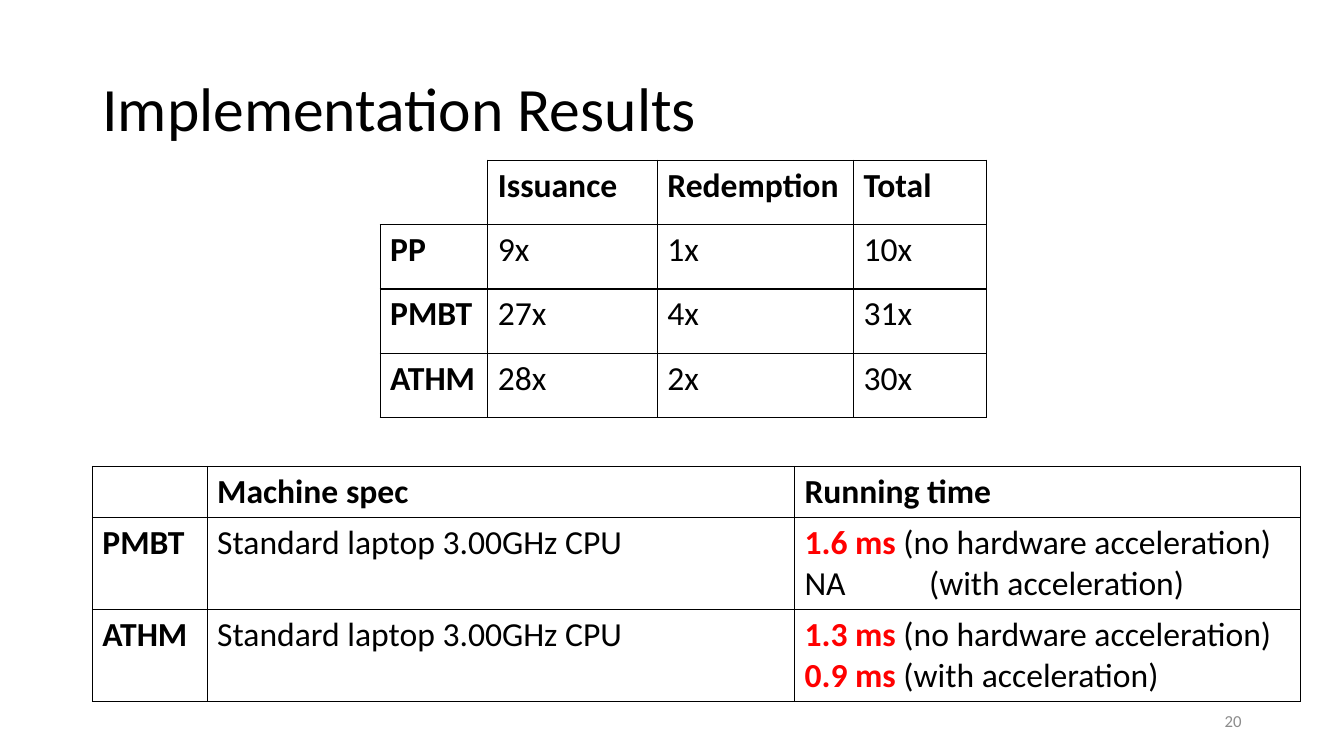
"""Build the slide with the results of the implementation."""
import pptx
import pptx.dml.color
import pptx.enum.text
import pptx.oxml
import pptx.oxml.ns
import pptx.util

Pt = pptx.util.Pt
ALIGN = pptx.enum.text.PP_ALIGN
MIDDLE = pptx.enum.text.MSO_ANCHOR.MIDDLE
FONT = "Calibri"
BLACK, RED, GREY = "000000", "FF0000", "8C8C8C"
SIDES = "LRTB"
NS = pptx.oxml.ns.nsdecls("a")
CPU = "Standard laptop 3.00GHz CPU"
SLOW = " (no hardware acceleration)"
FAST = " (with acceleration)"

COSTS = [
    ["", "Issuance", "Redemption", "Total"],
    ["PP", "9x", "1x", "10x"],
    ["PMBT", "27x", "4x", "31x"],
    ["ATHM", "28x", "2x", "30x"],
]
TIMES = [
    ["", "Machine spec", "Running time"],
    ["PMBT", CPU, [[("1.6 ms", True), (SLOW, False)],
                   [("NA\t(with acceleration)", False)]]],
    ["ATHM", CPU, [[("1.3 ms", True), (SLOW, False)],
                   [("0.9 ms", True), (FAST, False)]]],
]


def tint(code):
    return pptx.dml.color.RGBColor.from_string(code)


def add_run(para, text, size, color=BLACK, bold=False):
    run = para.add_run()
    run.text = text
    run.font.name = FONT
    run.font.size = Pt(size)
    run.font.bold = bold
    run.font.color.rgb = tint(color)


def add_tab(para, place):
    props = para._p.get_or_add_pPr()
    props.append(pptx.oxml.parse_xml(
        f'<a:tabLst {NS}><a:tab pos="{Pt(place)}" algn="l"/></a:tabLst>'))


def set_lines(cell, sides):
    props = cell._tc.get_or_add_tcPr()
    for index, side in enumerate(SIDES):
        paint = (f'<a:solidFill><a:srgbClr val="{BLACK}"/></a:solidFill>'
                 if side in sides else "<a:noFill/>")
        props.insert(index, pptx.oxml.parse_xml(
            f'<a:ln{side} {NS} w="{Pt(1)}">{paint}</a:ln{side}>'))


def fill_cell(cell, value, bold):
    if not value:
        return
    lines = [[(value, False)]] if isinstance(value, str) else value
    frame = cell.text_frame
    for index, parts in enumerate(lines):
        para = frame.add_paragraph() if index else frame.paragraphs[0]
        if any("\t" in text for text, _ in parts):
            add_tab(para, 89)
        for text, hot in parts:
            add_run(para, text, 24, RED if hot else BLACK, bold or hot)


def add_grid(slide, left, top, widths, heights, data, corner=SIDES):
    frame = slide.shapes.add_table(
        len(data), len(widths), Pt(left), Pt(top),
        Pt(sum(widths)), Pt(sum(heights)))
    table = frame.table
    table.horz_banding = False
    for col, width in zip(table.columns, widths):
        col.width = Pt(width)
    for row, height in zip(table.rows, heights):
        row.height = Pt(height)
    for r, values in enumerate(data):
        for c, value in enumerate(values):
            cell = table.cell(r, c)
            cell.fill.background()
            head = r == 0 or c == 0
            set_lines(cell, corner if r == c == 0 else SIDES)
            fill_cell(cell, value, head)


def set_title(slide, text):
    title = slide.shapes.title
    title.left, title.top = Pt(66), Pt(27.5)
    title.width, title.height = Pt(828), Pt(104.4)
    frame = title.text_frame
    frame.auto_size = pptx.enum.text.MSO_AUTO_SIZE.NONE
    frame.vertical_anchor = MIDDLE
    para = frame.paragraphs[0]
    para.alignment = ALIGN.LEFT
    para.line_spacing = 0.9
    add_run(para, text, 44)


def add_number(slide, text):
    box = slide.shapes.add_textbox(Pt(678), Pt(500.5), Pt(216), Pt(28.8))
    frame = box.text_frame
    frame.word_wrap = True
    frame.vertical_anchor = MIDDLE
    para = frame.paragraphs[0]
    para.alignment = ALIGN.RIGHT
    add_run(para, text, 12, GREY)


def main():
    deck = pptx.Presentation()
    deck.slide_width, deck.slide_height = Pt(960), Pt(540)
    slide = deck.slides.add_slide(deck.slide_layouts[5])
    set_title(slide, "Implementation Results")
    add_grid(slide, 271.5, 114.5, [77, 121, 140.2, 95], [46] * 4, COSTS, "RB")
    add_grid(slide, 66, 333.2, [82, 419.5, 361.5], [36.5, 65.8, 65.8], TIMES)
    add_number(slide, "20")
    deck.save("out.pptx")


if __name__ == "__main__":
    main()
